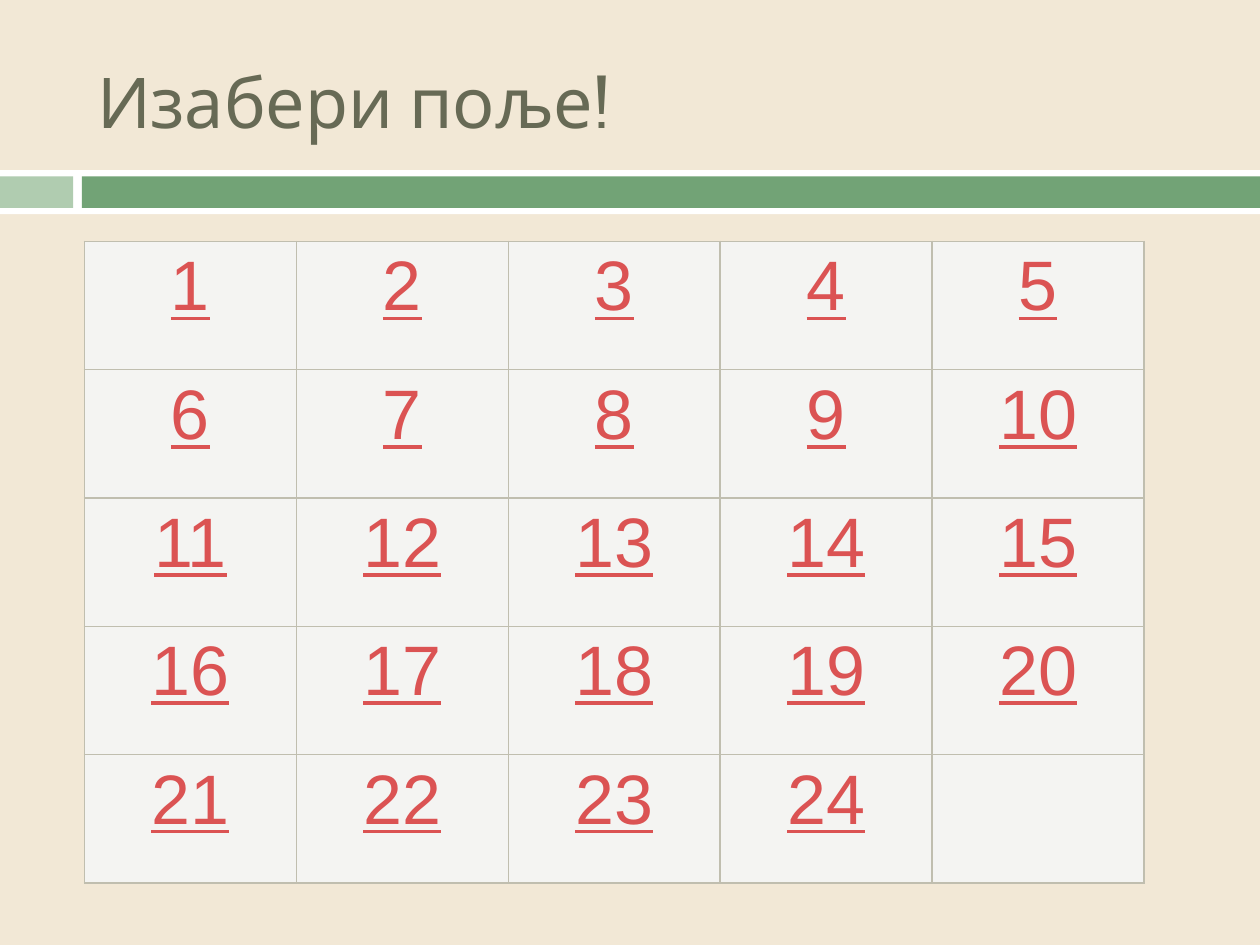
from lxml.etree import SubElement
from pptx import Presentation
from pptx.dml.color import RGBColor as RGB
from pptx.enum.shapes import MSO_SHAPE as Shape
from pptx.enum.text import MSO_ANCHOR as Anchor, PP_ALIGN as Align
from pptx.oxml.ns import qn
from pptx.util import Inches, Pt

COLORS = {
    "background": "F2E8D6",
    "white": "FFFFFF",
    "light_green": "B0CCB0",
    "green": "72A376",
    "title": "676A55",
    "link": "DB5353",
    "cell": "F4F4F2",
    "border": "C0BEAF",
}
TITLE = {"name": "Cabin", "size": Pt(40), "bold": False}
NUMBER = {"name": "Arial", "size": Pt(40), "underline": True}
WIDTH, HEIGHT = 10, 7.5
GRID = 5
LAST = 24


class Deck:
    def __init__(self):
        self.prs = Presentation()
        self.prs.slide_width = Inches(WIDTH)
        self.prs.slide_height = Inches(HEIGHT)
        self.slide = self.prs.slides.add_slide(self.prs.slide_layouts[5])
        self.paint(self.slide.background.fill, "background")

    def paint(self, fill, color):
        fill.solid()
        fill.fore_color.rgb = RGB.from_string(COLORS[color])

    def box(self, *percents):
        sides = (WIDTH, HEIGHT, WIDTH, HEIGHT)
        return [Inches(p * side / 100) for p, side in zip(percents, sides)]

    def text(self, tf, words, style, color, align):
        p = tf.paragraphs[0]
        p.alignment = align
        r = p.add_run()
        r.text = words
        for key, value in style.items():
            setattr(r.font, key, value)
        r.font.color.rgb = RGB.from_string(COLORS[color])

    def band(self, x, y, w, h, color):
        sp = self.slide.shapes.add_shape(Shape.RECTANGLE, *self.box(x, y, w, h))
        sp.shadow.inherit = False
        sp.line.fill.background()
        self.paint(sp.fill, color)

    def title(self, x, y, w, h, words):
        sp = self.slide.shapes.title
        sp.left, sp.top, sp.width, sp.height = self.box(x, y, w, h)
        sp.text_frame.vertical_anchor = Anchor.MIDDLE
        self.text(sp.text_frame, words, TITLE, "title", Align.LEFT)

    def border(self, cell):
        tc_pr = cell._tc.get_or_add_tcPr()
        for side in ("a:lnL", "a:lnR", "a:lnT", "a:lnB"):
            ln = SubElement(tc_pr, qn(side), w=str(Pt(1)))
            fill = SubElement(ln, qn("a:solidFill"))
            SubElement(fill, qn("a:srgbClr"), val=COLORS["border"])

    def number_table(self, x, y, w, h, size, last):
        frame = self.slide.shapes.add_table(size, size, *self.box(x, y, w, h))
        for number, cell in enumerate(frame.table.iter_cells(), 1):
            self.border(cell)
            self.paint(cell.fill, "cell")
            if number <= last:
                self.text(cell.text_frame, str(number), NUMBER, "link", Align.CENTER)


def main():
    deck = Deck()
    deck.band(0, 18, 100, 4.67, "white")
    deck.band(0, 18.67, 5.8, 3.33, "light_green")
    deck.band(6.5, 18.67, 93.5, 3.33, "green")
    deck.title(6.7, 2.27, 86.7, 16.67, "Изабери поље!")
    deck.number_table(6.7, 25.55, 84.1, 67.9, GRID, LAST)
    deck.prs.save("out.pptx")


if __name__ == "__main__":
    main()
